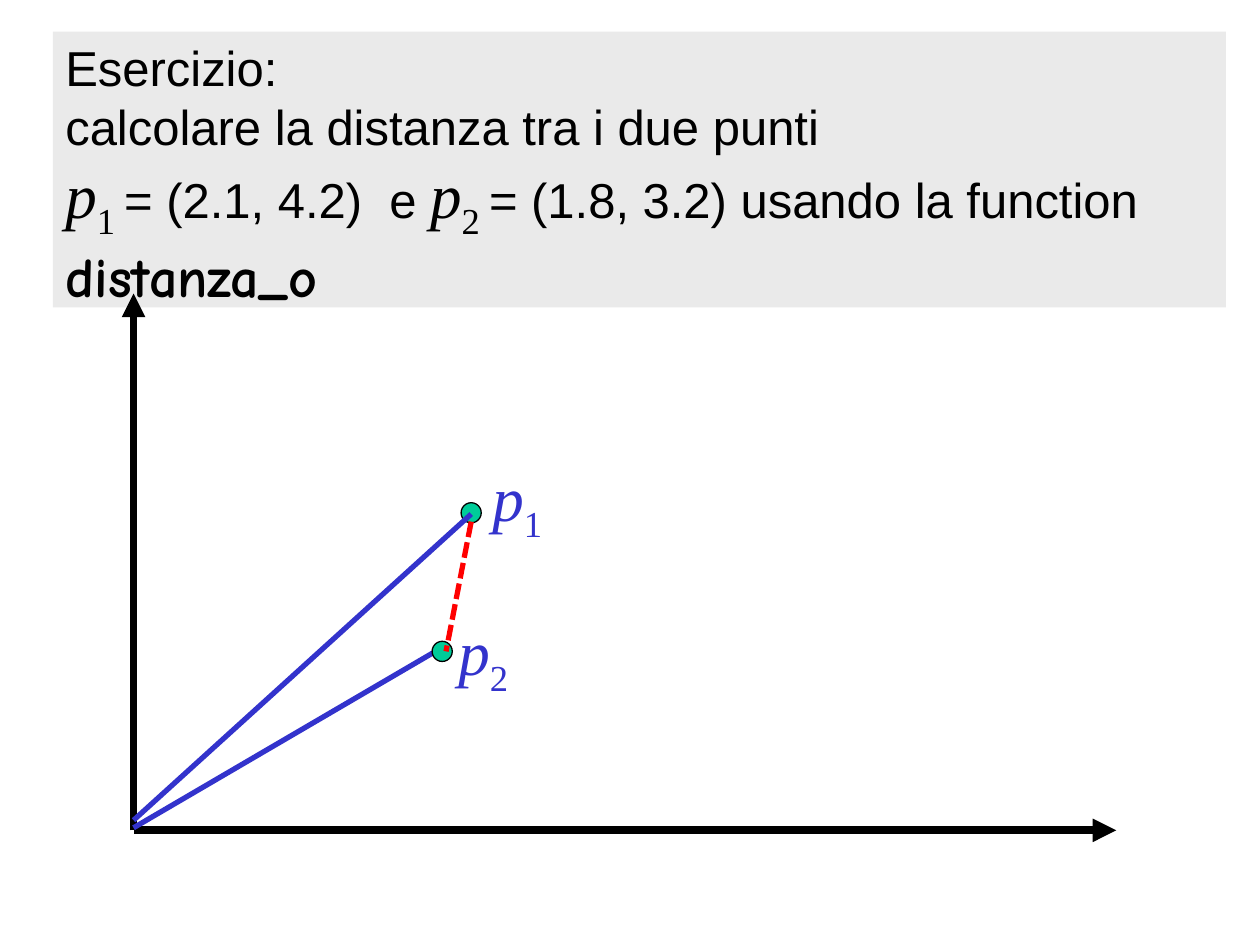
import pptx
import pptx.dml.color
import pptx.enum.dml
import pptx.enum.shapes
import pptx.enum.text
import pptx.oxml
import pptx.oxml.ns
import pptx.util

THEME = {
    "panel": "EAEAEA", "ink": "000000", "point": "00CC99",
    "vector": "3333CC", "distance": "FF0000",
    "body": ("Arial", 28), "math": ("Times New Roman", 36), "code": ("Comic Neue", 32),
    "axis_width": 4.5, "vector_width": 3, "outline_width": 0.75,
}
COLOR = {name: pptx.dml.color.RGBColor.from_string(THEME[name])
         for name in ("panel", "ink", "point", "vector", "distance")}

deck = pptx.Presentation()
deck.slide_width = pptx.util.Inches(10)
deck.slide_height = pptx.util.Inches(7.5)
page = deck.slides.add_slide(deck.slide_layouts[6])
UNIT = deck.slide_width / 100


def draw_line(shapes, start, end, color, width, arrow=False):
    ends = [round(value * UNIT) for value in (*start, *end)]
    line = shapes.add_connector(pptx.enum.shapes.MSO_CONNECTOR.STRAIGHT, *ends)
    line.line.color.rgb = COLOR[color]
    line.line.width = pptx.util.Pt(width)
    if arrow:
        pptx.oxml.ns.qn("a:tailEnd")
        tail = line.line._get_or_add_ln().makeelement(pptx.oxml.ns.qn("a:tailEnd"), {"type": "triangle"})
        line.line._get_or_add_ln().append(tail)
    properties = line._element.spPr
    properties.append(properties.makeelement(pptx.oxml.ns.qn("a:effectLst"), {}))
    return line


def write_spans(para, spans, color):
    para.alignment = pptx.enum.text.PP_ALIGN.LEFT
    for text, style in spans:
        span = para.add_run()
        span.text = text
        family, size = THEME["math" if style == "sub" else style]
        span.font.name = family
        span.font.size = pptx.util.Pt(size)
        span.font.color.rgb = COLOR[color]
        span.font.italic = style == "math"
        span.font.bold = style == "code"
        if style == "sub":
            span._r.get_or_add_rPr().set("baseline", "-25000")


exercise = [
    [("Esercizio:", "body")],
    [("calcolare la distanza tra i due punti", "body")],
    [("p", "math"), ("1 ", "sub"), ("= (2.1, 4.2)  e ", "body"),
     ("p", "math"), ("2 ", "sub"), ("= (1.8, 3.2) usando la function ", "body"),
     ("distanza_o", "code")],
]
panel = page.shapes.add_shape(
    pptx.enum.shapes.MSO_SHAPE.RECTANGLE,
    *[round(value * UNIT) for value in (4.2, 2.5, 93.1, 21.9)])
panel.shadow.inherit = False
panel.fill.solid()
panel.fill.fore_color.rgb = COLOR["panel"]
panel.line.fill.background()
frame = panel.text_frame
frame.word_wrap = True
frame.auto_size = pptx.enum.text.MSO_AUTO_SIZE.SHAPE_TO_FIT_TEXT
frame.vertical_anchor = pptx.enum.text.MSO_ANCHOR.TOP
for index, spans in enumerate(exercise):
    para = frame.add_paragraph() if index else frame.paragraphs[0]
    write_spans(para, spans, "ink")

origin = (10.6, 65.9)
axes = page.shapes.add_group_shape()
for tip in ((88.6, 65.9), (10.6, 23.3)):
    draw_line(axes.shapes, origin, tip, "ink", THEME["axis_width"], arrow=True)

draw_line(page.shapes, (10.6, 65.7), (34.9, 51.5), "vector", THEME["vector_width"])

for left, top in ((36.6, 39.9), (34.3, 50.9)):
    point = page.shapes.add_shape(
        pptx.enum.shapes.MSO_SHAPE.OVAL,
        *[round(value * UNIT) for value in (left, top, 1.6, 1.6)])
    point.shadow.inherit = False
    point.fill.solid()
    point.fill.fore_color.rgb = COLOR["point"]
    point.line.color.rgb = COLOR["ink"]
    point.line.width = pptx.util.Pt(THEME["outline_width"])

first_vector = page.shapes.add_group_shape()
draw_line(first_vector.shapes, (10.6, 65.1), (37.4, 40.8), "vector", THEME["vector_width"])

for shapes, number, left, top in ((first_vector.shapes, "1", 38.1, 35.9),
                                  (page.shapes, "2", 35.4, 48.1)):
    label = shapes.add_textbox(*[round(value * UNIT) for value in (left, top, 8.3, 7.1)])
    label.text_frame.word_wrap = True
    label.text_frame.auto_size = pptx.enum.text.MSO_AUTO_SIZE.SHAPE_TO_FIT_TEXT
    write_spans(label.text_frame.paragraphs[0], [("p", "math"), (number, "sub")], "vector")

distance = draw_line(page.shapes, (37.4, 41.4), (35.4, 51.7), "distance", THEME["vector_width"])
distance.line.dash_style = pptx.enum.dml.MSO_LINE.SQUARE_DOT
distance.line._get_or_add_ln().prstDash.set("val", "sysDash")

deck.save("out.pptx")
